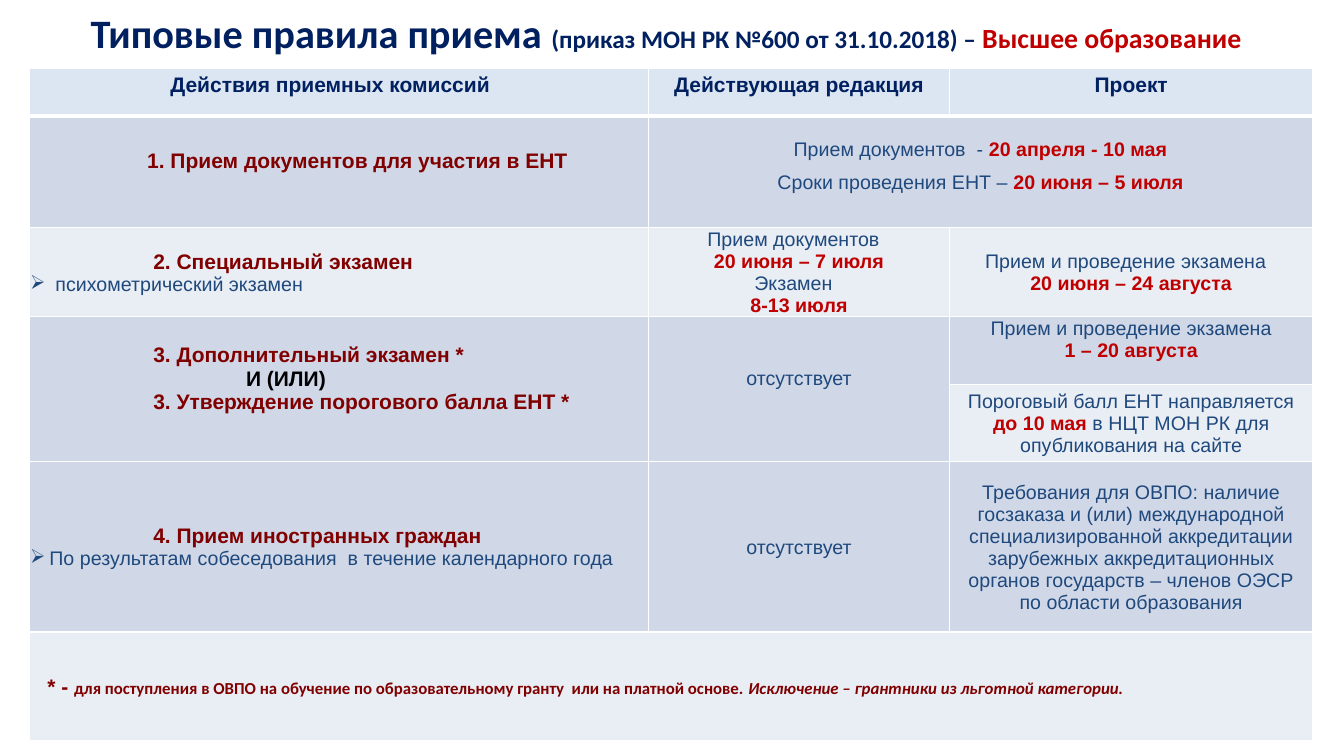
import lxml.etree
import pptx
import pptx.dml.color
import pptx.enum.text
import pptx.oxml.ns
import pptx.util

Inches = pptx.util.Inches
ALIGN = pptx.enum.text.PP_ALIGN
ANCHOR = pptx.enum.text.MSO_ANCHOR

COLORS = {
    "navy": "002060", "red": "C00000", "maroon": "800000", "blue": "1F497D",
    "black": "000000", "white": "FFFFFF",
    "header": "DCE6F2", "dark": "D0D8E8", "light": "E9EDF4",
}

# name: (font, size, colour, bold, italic)
TEXT_STYLES = {
    "title": ("Calibri", 28.8, "navy", True, False),
    "order": ("Calibri", 18, "navy", True, False),
    "level": ("Calibri", 19.8, "red", True, False),
    "header": ("Arial", 15, "navy", True, False),
    "action": ("Arial", 15, "maroon", True, False),
    "either": ("Arial", 15, "black", True, False),
    "plain": ("Arial", 14, "blue", False, False),
    "date": ("Arial", 14, "red", True, False),
    "note": ("Calibri", 12, "maroon", True, False),
    "exception": ("Calibri", 12, "maroon", True, True),
}


def line(*runs, **layout):
    """One paragraph: (text, style) runs and its layout options."""
    return runs, layout


def centred(text, style="plain", **layout):
    return line((text, style), align=ALIGN.CENTER, **layout)


def action(text, indent=1.22, style="action"):
    return line((text, style), indent=indent)


class RulesSlide:
    def __init__(self, presentation):
        self.slide = presentation.slides.add_slide(presentation.slide_layouts[5])

    def fill_text(self, frame, lines):
        frame.word_wrap = True
        for number, (runs, layout) in enumerate(lines):
            paragraph = frame.add_paragraph() if number else frame.paragraphs[0]
            self.lay_out(paragraph, **layout)
            for text, style in runs:
                run = paragraph.add_run()
                run.text = text
                name, size, color, run.font.bold, run.font.italic = TEXT_STYLES[style]
                run.font.name = name
                run.font.size = pptx.util.Pt(size)
                run.font.color.rgb = pptx.dml.color.RGBColor.from_string(COLORS[color])

    def lay_out(self, paragraph, align=ALIGN.LEFT, indent=0, right=0, spacing=1, bullet=None):
        paragraph.alignment = align
        paragraph.line_spacing = spacing
        properties = paragraph._p.get_or_add_pPr()
        properties.set("marL", str(Inches(indent)))
        properties.set("marR", str(Inches(right)))
        properties.set("indent", str(-Inches(indent) if bullet else 0))
        if bullet:
            mark = lxml.etree.SubElement(properties, pptx.oxml.ns.qn("a:buChar"))
            mark.set("char", bullet)

    def title(self, box, lines):
        title = self.slide.shapes.title
        title.left, title.top, title.width, title.height = map(Inches, box)
        title.text_frame.vertical_anchor = ANCHOR.MIDDLE
        title.text_frame.auto_size = pptx.enum.text.MSO_AUTO_SIZE.NONE
        self.fill_text(title.text_frame, lines)

    def table(self, left, top, widths, heights):
        table = self.slide.shapes.add_table(
            len(heights), len(widths), Inches(left), Inches(top),
            Inches(sum(widths)), Inches(sum(heights))).table
        for column, width in zip(table.columns, widths):
            column.width = Inches(width)
        for row, height in zip(table.rows, heights):
            row.height = Inches(height)
        return table

    def cell(self, cell, fill, header=False):
        cell.fill.solid()
        cell.fill.fore_color.rgb = pptx.dml.color.RGBColor.from_string(COLORS[fill])
        for place, side in enumerate(("lnL", "lnR", "lnT", "lnB")):
            border = lxml.etree.Element(pptx.oxml.ns.qn("a:" + side))
            border.set("w", str(pptx.util.Pt(3 if header and side == "lnB" else 1)))
            solid = lxml.etree.SubElement(border, pptx.oxml.ns.qn("a:solidFill"))
            color = lxml.etree.SubElement(solid, pptx.oxml.ns.qn("a:srgbClr"))
            color.set("val", COLORS["white"])
            cell._tc.get_or_add_tcPr().insert(place, border)

    def cell_text(self, cell, lines, header=False, bottom=0):
        side, top, base = (0.13, 0.05, 0.05) if header else (0.01, 0.01, bottom)
        cell.margin_left = cell.margin_right = Inches(side)
        cell.margin_top, cell.margin_bottom = Inches(top), Inches(base)
        cell.vertical_anchor = ANCHOR.TOP if header else ANCHOR.MIDDLE
        self.fill_text(cell.text_frame, lines)


# (row, column): paragraphs
CELLS = {
    (0, 0): [centred("Действия приемных комиссий", "header", right=0.17)],
    (0, 1): [centred("Действующая редакция", "header")],
    (0, 2): [centred("Проект", "header")],
    (1, 0): [action("1. Прием документов для участия в ЕНТ", 1.16)],
    (1, 1): [
        line(("Прием документов  - ", "plain"), ("20 апреля - 10 мая", "date"),
             align=ALIGN.CENTER, spacing=1.5),
        line(("Сроки проведения ЕНТ – ", "plain"), ("20 июня – 5 июля", "date"),
             align=ALIGN.CENTER, spacing=1.5)],
    (2, 0): [
        action("2. Специальный экзамен"),
        line(("психометрический экзамен", "plain"), indent=0.25, bullet="➢")],
    (2, 1): [
        centred("Прием документов", right=0.11),
        centred("20 июня – 7 июля", "date"),
        centred("Экзамен", right=0.11),
        centred("8-13 июля", "date")],
    (2, 2): [
        centred("Прием и проведение экзамена", right=0.11),
        centred("20 июня – 24 августа", "date")],
    (3, 0): [
        action("3. Дополнительный экзамен *"),
        action("И (ИЛИ)", 2.14, "either"),
        action("3. Утверждение порогового балла ЕНТ *")],
    (3, 1): [centred("отсутствует")],
    (3, 2): [
        centred("Прием и проведение экзамена"),
        centred("1 – 20 августа", "date")],
    (4, 2): [
        centred("Пороговый балл ЕНТ направляется"),
        line(("до 10 мая ", "date"), ("в НЦТ МОН РК для опубликования на сайте", "plain"),
             align=ALIGN.CENTER)],
    (5, 0): [
        action("4. Прием иностранных граждан"),
        line(("По результатам собеседования  в течение календарного года", "plain"),
             indent=0.19, bullet="➢")],
    (5, 1): [centred("отсутствует")],
    (5, 2): [
        centred("Требования для ОВПО: наличие госзаказа и (или) международной "
                "специализированной аккредитации зарубежных аккредитационных "
                "органов государств – членов ОЭСР"),
        centred("по области образования")],
    (6, 0): [
        line(("* - ", "action"),
             ("для поступления в ОВПО на обучение по образовательному гранту  "
              "или на платной основе. ", "note"),
             ("Исключение – грантники из льготной категории.", "exception"), indent=0.17)],
}
ROW_FILLS = ["header", "dark", "light", "dark", "light", "dark", "light"]
MERGES = [((1, 1), (1, 2)), ((3, 0), (4, 0)), ((3, 1), (4, 1)), ((6, 0), (6, 2))]
RAISED_ROWS = {1: 0.23, 3: 0.22}


def main():
    presentation = pptx.Presentation()
    presentation.slide_width, presentation.slide_height = Inches(13.33), Inches(7.5)
    rules = RulesSlide(presentation)
    rules.title((0.67, 0.13, 12, 0.38), [
        line(("Типовые правила приема ", "title"),
             ("(приказ МОН РК №600 от 31.10.2018) – ", "order"),
             ("Высшее образование", "level"), align=ALIGN.CENTER, right=0.13)])

    table = rules.table(0.29, 0.68, [6.14, 2.99, 3.6],
                        [0.47, 1.11, 0.88, 0.66, 0.77, 1.69, 1.08])
    for first, last in MERGES:
        table.cell(*first).merge(table.cell(*last))
    for row, fill in enumerate(ROW_FILLS):
        for column in range(3):
            merged_down = row == 4 and column < 2
            rules.cell(table.cell(row, column), "dark" if merged_down else fill, row == 0)
    for (row, column), lines in CELLS.items():
        rules.cell_text(table.cell(row, column), lines, row == 0, RAISED_ROWS.get(row, 0))
    presentation.save("out.pptx")


if __name__ == "__main__":
    main()
